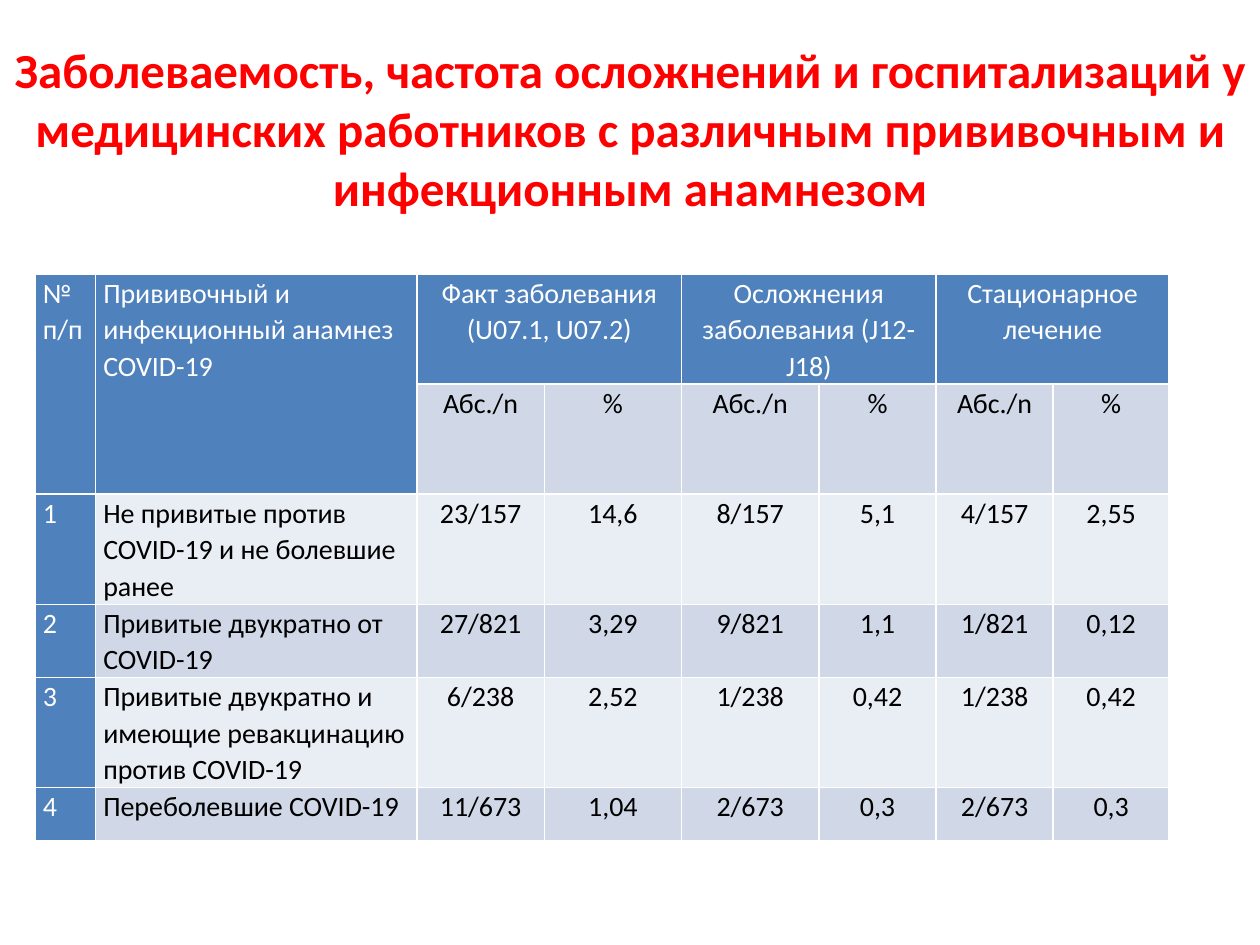
from lxml import etree
from pptx import Presentation
from pptx.dml.color import RGBColor
from pptx.enum import text
from pptx.oxml import ns
from pptx.util import Inches, Pt

WIDE, HIGH = Inches(10), Inches(7.5)
FONT = "Calibri"
HUES = {"title": "FF0000", "head": "4F81BD", "dark": "D0D8E8",
        "pale": "E9EDF4", "ink": "000000", "white": "FFFFFF"}
LEFT, MID = text.PP_ALIGN.LEFT, text.PP_ALIGN.CENTER

TITLE = ("Заболеваемость, частота осложнений и госпитализаций у медицинских "
         "работников с различным прививочным и инфекционным анамнезом")
SIDE = ["№ п/п", "Прививочный и инфекционный анамнез COVID-19"]
GROUPS = ["Факт заболевания (U07.1, U07.2)",
          "Осложнения заболевания (J12-J18)", "Стационарное лечение"]
PAIR = ["Абс./n", "%"]
ROWS = [
    ["1", "Не привитые против COVID-19 и не болевшие ранее",
     "23/157", "14,6", "8/157", "5,1", "4/157", "2,55"],
    ["2", "Привитые двукратно от COVID-19",
     "27/821", "3,29", "9/821", "1,1", "1/821", "0,12"],
    ["3", "Привитые двукратно и имеющие ревакцинацию против COVID-19",
     "6/238", "2,52", "1/238", "0,42", "1/238", "0,42"],
    ["4", "Переболевшие COVID-19",
     "11/673", "1,04", "2/673", "0,3", "2/673", "0,3"],
]
# Relative sizes of the table's columns and rows
COLS = [48, 255, 101, 109, 109, 93, 93, 92]
TALL = [87, 87, 87, 58, 87, 42]


def area(x, y, w, h):
    """Turn shares of the slide into a box."""
    return int(x * WIDE), int(y * HIGH), int(w * WIDE), int(h * HIGH)


def style(par, size, hue, align, bold=False):
    par.alignment = align
    for run in par.runs:
        font = run.font
        font.name, font.size, font.bold = FONT, Pt(size), bold
        font.color.rgb = RGBColor.from_string(HUES[hue])


def edge(cell):
    """Put a thin white line on each side of a cell."""
    props = cell._tc.get_or_add_tcPr()
    for spot, tag in enumerate(("a:lnL", "a:lnR", "a:lnT", "a:lnB")):
        line = etree.Element(ns.qn(tag), w=str(Pt(1)))
        fill = etree.SubElement(line, ns.qn("a:solidFill"))
        etree.SubElement(fill, ns.qn("a:srgbClr"), val=HUES["white"])
        props.insert(spot, line)


def paint(cell, words, fill, align):
    cell.margin_left = cell.margin_right = Inches(0.06)
    cell.margin_top = cell.margin_bottom = 0
    cell.fill.solid()
    cell.fill.fore_color.rgb = RGBColor.from_string(HUES[fill])
    edge(cell)
    cell.text_frame.text = words
    par = cell.text_frame.paragraphs[0]
    par.line_spacing = 1.07
    style(par, 16, "white" if fill == "head" else "ink", align)
    par.font.size = Pt(16)


def add_title(slide, box):
    frame = slide.shapes.add_textbox(*box).text_frame
    frame.word_wrap = True
    frame.vertical_anchor = text.MSO_ANCHOR.MIDDLE
    frame.text = TITLE
    style(frame.paragraphs[0], 28, "title", MID, True)


def add_grid(slide, box):
    grid = slide.shapes.add_table(len(TALL), len(COLS), *box).table
    for col, part in zip(grid.columns, COLS):
        col.width = box[2] * part // sum(COLS)
    for row, part in zip(grid.rows, TALL):
        row.height = box[3] * part // sum(TALL)

    # Two header rows, then the data
    top = SIDE + [word for name in GROUPS for word in (name, "")]
    lines = [top, ["", ""] + PAIR * len(GROUPS)] + ROWS
    for r, line in enumerate(lines):
        band = "dark" if r % 2 else "pale"
        for c, words in enumerate(line):
            head = r == 0 or c == 0 or (r == 1 and c == 1)
            paint(grid.cell(r, c), words, "head" if head else band,
                  LEFT if c < len(SIDE) else MID)

    # Merged headers: side labels go down, groups go across
    for c in range(len(SIDE)):
        grid.cell(0, c).merge(grid.cell(1, c))
    for c in range(len(SIDE), len(COLS), len(PAIR)):
        grid.cell(0, c).merge(grid.cell(0, c + 1))


def main():
    deck = Presentation()
    deck.slide_width, deck.slide_height = WIDE, HIGH
    slide = deck.slides.add_slide(deck.slide_layouts[6])
    add_title(slide, area(-0.005, 0.05, 1.01, 0.17))
    add_grid(slide, area(0.028, 0.29, 0.9, 0.6))
    deck.save("out.pptx")


if __name__ == "__main__":
    main()
